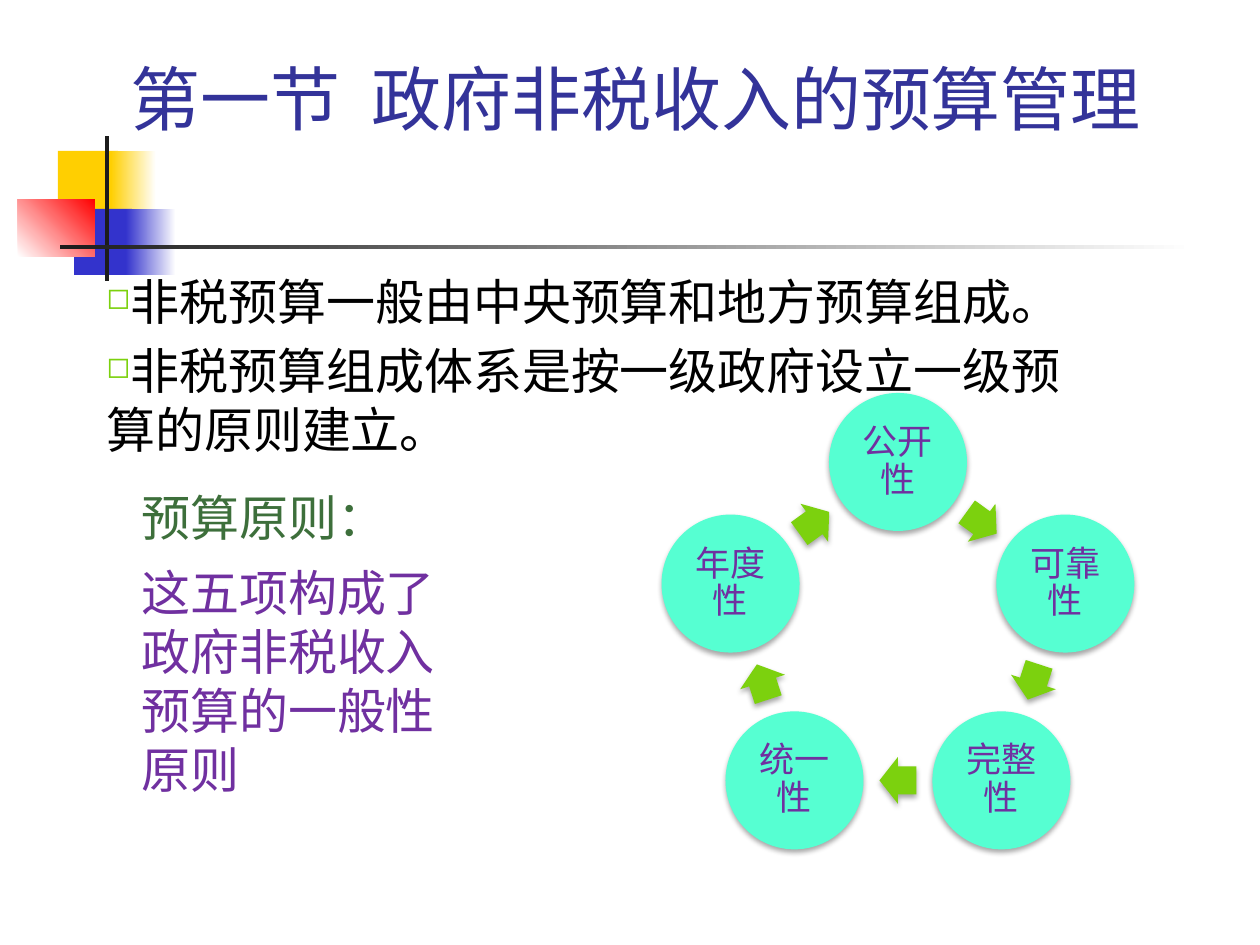
"""Build the slide on budget management of non-tax government revenue."""
from math import cos, pi, sin
from lxml import etree
from pptx import Presentation
from pptx.dml.color import RGBColor
from pptx.enum.shapes import MSO_SHAPE
from pptx.enum.text import MSO_ANCHOR, PP_ALIGN
from pptx.oxml.ns import qn
from pptx.util import Emu, Pt

RECTANGLE, OVAL, ARROW = MSO_SHAPE.RECTANGLE, MSO_SHAPE.OVAL, MSO_SHAPE.RIGHT_ARROW
TOP, MIDDLE = MSO_ANCHOR.TOP, MSO_ANCHOR.MIDDLE
CENTER = PP_ALIGN.CENTER
PX = 914400 / 126

THEME = {
    "white": "FFFFFF", "black": "000000", "yellow": "FFCF01", "blue": "3333CC",
    "red": "FF0000", "charcoal": "1C1C1C", "navy": "333399", "forest": "3D6F3B",
    "purple": "7030A0", "mint": "56FFD2", "lime": "7CD10E",
    "title_font": "Cabin", "body_font": "Noto Sans CJK SC", "ring_font": "Noto Sans CJK JP",
    "title_size": 40, "body_size": 28, "ring_size": 20,
}


def add_block(kind, bounds, colors, angle=0, shadow=False):
    block = page.shapes.add_shape(kind, *[Emu(round(n * PX)) for n in bounds])
    block.shadow.inherit = False
    block.line.fill.background()
    if len(colors) == 1:
        block.fill.solid()
        block.fill.fore_color.rgb = RGBColor.from_string(THEME[colors[0]])
    else:
        block.fill.gradient()
        block.fill.gradient_angle = angle
        for stop, color in zip(block.fill.gradient_stops, colors):
            stop.color.rgb = RGBColor.from_string(THEME[color])
    if shadow:
        effects = block._element.spPr.find(qn("a:effectLst"))
        outer = etree.SubElement(effects, qn("a:outerShdw"), blurRad=str(Pt(3.1)),
                                 dist=str(Pt(1.8)), dir="5400000", rotWithShape="0")
        tint = etree.SubElement(outer, qn("a:srgbClr"), val=THEME["black"])
        etree.SubElement(tint, qn("a:alpha"), val="35000")
    return block


def write_text(box, lines, role, color, anchor):
    frame = box.text_frame
    frame.word_wrap = True
    frame.vertical_anchor = anchor
    frame.text = "\n".join(lines)
    for para in frame.paragraphs:
        para.font.size = Pt(THEME[role + "_size"])
        para.font.name = THEME[role + "_font"]
        para.font.color.rgb = RGBColor.from_string(THEME[color])
        defaults = para._p.pPr.find(qn("a:defRPr"))
        etree.SubElement(defaults, qn("a:ea"), typeface=THEME[role + "_font"])
    return frame


deck = Presentation()
deck.slide_width, deck.slide_height = Emu(round(1260 * PX)), Emu(round(945 * PX))
page = deck.slides.add_slide(deck.slide_layouts[6])

for bounds, colors, angle in [
    ((58, 151, 60, 66), ["yellow"], 0),
    ((111, 151, 45, 66), ["yellow", "white"], 0),
    ((74, 209, 58, 66), ["blue"], 0),
    ((126, 209, 50, 66), ["blue", "white"], 0),
    ((18, 199, 77, 58), ["white", "red"], 45),
    ((105, 136, 4, 145), ["charcoal"], 0),
    ((60, 245, 1134, 4), ["charcoal", "white"], 0),
]:
    add_block(RECTANGLE, bounds, colors, angle)

frames = []
for bounds, lines, role, color, anchor in [
    ((118, 59, 1097, 78), ["第一节  政府非税收入的预算管理"], "title", "navy", MIDDLE),
    ((74, 265, 1022, 500), ["非税预算一般由中央预算和地方预算组成。",
                            "非税预算组成体系是按一级政府设立一级预算的原则建立。"],
     "body", "black", TOP),
    ((129, 417, 386, 199), ["预算原则："], "body", "forest", MIDDLE),
    ((129, 581, 336, 199), ["这五项构成了政府非税收入预算的一般性原则"],
     "body", "purple", MIDDLE),
]:
    box = page.shapes.add_textbox(*[Emu(round(n * PX)) for n in bounds])
    frames.append(write_text(box, lines, role, color, anchor))

for para in frames[1].paragraphs:
    para.space_before = Pt(6)
    props = para._p.pPr
    props.set("marL", str(round(20 * PX)))
    props.set("indent", "0")
    defaults = props.find(qn("a:defRPr"))
    bullet_color = etree.Element(qn("a:buClr"))
    etree.SubElement(bullet_color, qn("a:srgbClr"), val=THEME["lime"])
    defaults.addprevious(bullet_color)
    defaults.addprevious(etree.Element(qn("a:buSzPct"), val="60000"))
    defaults.addprevious(etree.Element(qn("a:buChar"), char="◻"))

principles = ["公开性", "可靠性", "完整性", "统一性", "年度性"]
center_x, center_y, radius, diameter = 898, 638, 176, 138
arrow_width, arrow_height = 37, 47
step = 2 * pi / len(principles)
arrow_radius = radius * cos(step / 2)

for index, principle in enumerate(principles):
    turn = index * step
    left = center_x + radius * sin(turn) - diameter / 2
    top = center_y - radius * cos(turn) - diameter / 2
    circle = add_block(OVAL, (left, top, diameter, diameter), ["mint"], shadow=True)
    frame = write_text(circle, [principle], "ring", "purple", MIDDLE)
    frame.margin_left = frame.margin_right = Emu(round(4 * PX))
    frame.margin_top = frame.margin_bottom = Emu(round(4 * PX))
    frame.paragraphs[0].alignment = CENTER
    frame.paragraphs[0].line_spacing = 0.9

    turn += step / 2
    left = center_x + arrow_radius * sin(turn) - arrow_width / 2
    top = center_y - arrow_radius * cos(turn) - arrow_height / 2
    arrow = add_block(ARROW, (left, top, arrow_width, arrow_height), ["lime"], shadow=True)
    arrow.adjustments[0], arrow.adjustments[1] = 0.6, 0.5
    arrow.rotation = 36 + 72 * index

deck.save("out.pptx")
